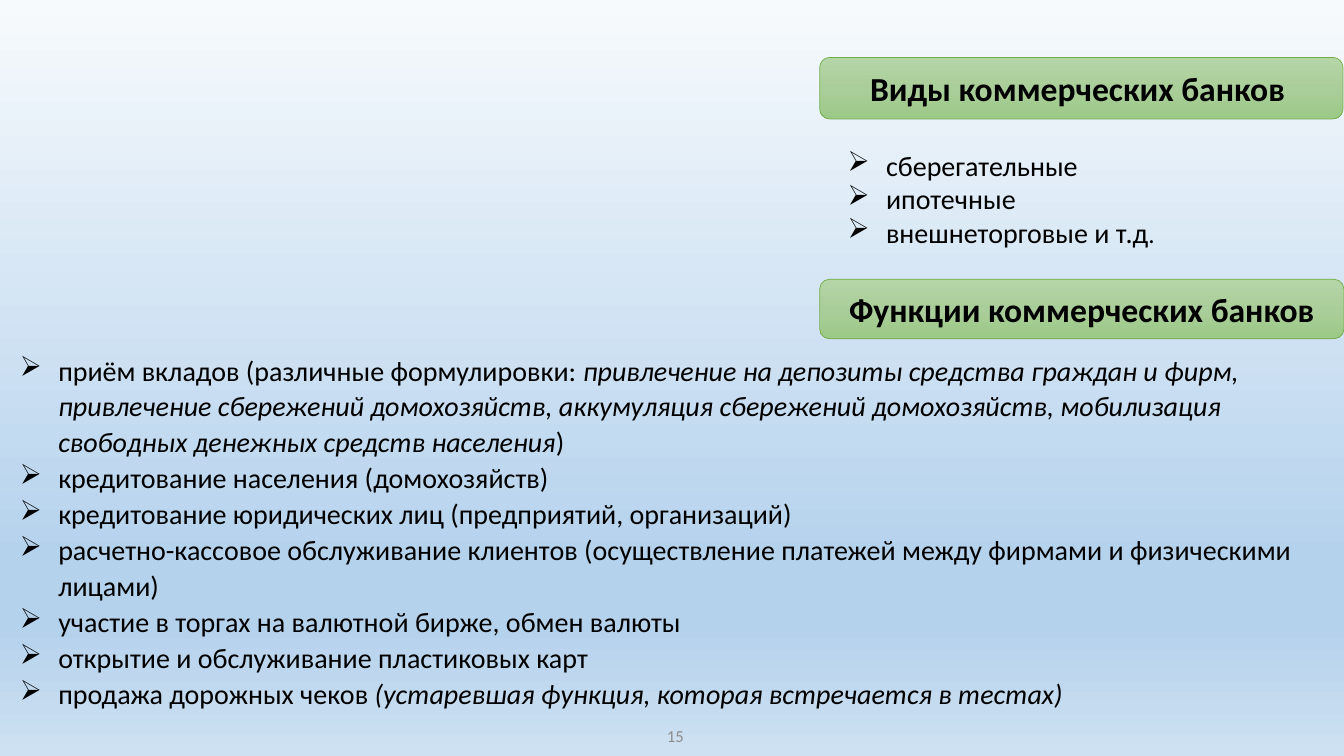
"""Build the slide on the kinds and functions of commercial banks."""
from dataclasses import dataclass

from lxml.etree import SubElement
from pptx import Presentation
from pptx.dml.color import RGBColor
from pptx.dml.fill import FillFormat
from pptx.enum.shapes import MSO_SHAPE as Preset
from pptx.enum.text import MSO_ANCHOR as Anchor, PP_ALIGN as Align
from pptx.oxml.ns import qn
from pptx.slide import Slide
from pptx.text.text import TextFrame
from pptx.util import Inches, Pt

FONT = "Calibri"
COLORS = {
    "text": "000000", "number": "8C8C8C", "border": "70AD47",
    "sky_top": "F7FAFD", "sky_deep": "B5D2EC", "sky_bottom": "CEE1F2",
    "green_top": "B5D5A7", "green_middle": "AACE9A", "green_bottom": "9CC987",
}
SKY = [(0, "sky_top"), (74, "sky_deep"), (83, "sky_deep"), (100, "sky_bottom")]
GREEN = [(0, "green_top"), (50, "green_middle"), (100, "green_bottom")]


@dataclass(frozen=True)
class Box:
    left: float
    top: float
    width: float
    height: float

    def lengths(self) -> list[Inches]:
        """Give the four lengths in the order that the shape methods take."""
        return [Inches(n) for n in (self.left, self.top, self.width, self.height)]


@dataclass(frozen=True)
class Part:
    text: str
    italic: bool = False
    size: int | None = None


@dataclass(frozen=True)
class Heading:
    box: Box
    text: str


@dataclass(frozen=True)
class BulletList:
    box: Box
    items: list[list[Part]]
    anchor: Anchor
    line_spacing: float


HEADINGS = [
    Heading(Box(8.13, 0.57, 5.19, 0.61), "Виды коммерческих банков "),
    Heading(Box(8.13, 2.77, 5.2, 0.59), "Функции коммерческих банков"),
]
BULLET_LISTS = [
    BulletList(Box(8.31, 1.41, 4.46, 1.11), [
        [Part("сберегательные")],
        [Part("ипотечные")],
        [Part("внешнеторговые и т.д"), Part(".", size=18)],
    ], Anchor.BOTTOM, 1.0),
    BulletList(Box(0.1, 3.43, 13.14, 3.7), [
        [Part("приём вкладов (различные формулировки: "),
         Part("привлечение на депозиты средства граждан и фирм, привлечение "
              "сбережений домохозяйств, аккумуляция сбережений домохозяйств, "
              "мобилизация свободных денежных средств населения", italic=True),
         Part(")")],
        [Part("кредитование населения (домохозяйств)")],
        [Part("кредитование юридических лиц (предприятий, организаций)")],
        [Part("расчетно-кассовое обслуживание клиентов (осуществление платежей "
              "между фирмами и физическими лицами)")],
        [Part("участие в торгах на валютной бирже, обмен валюты")],
        [Part("открытие и обслуживание пластиковых карт")],
        [Part("продажа дорожных чеков "),
         Part("(устаревшая функция, которая встречается в тестах)", italic=True)],
    ], Anchor.TOP, 1.07),
]


def color(name: str) -> RGBColor:
    """Look up a colour by its name."""
    return RGBColor.from_string(COLORS[name])


def fill_downward(fill: FillFormat, owner, stops: list[tuple[int, str]]) -> None:
    """Fill from top to bottom through the given stops."""
    fill.gradient()
    fill.gradient_angle = 270
    stop_list = owner.find(".//" + qn("a:gsLst"))
    for old_stop in list(stop_list):
        stop_list.remove(old_stop)
    for percent, name in stops:
        stop = SubElement(stop_list, qn("a:gs"), pos=str(percent * 1000))
        SubElement(stop, qn("a:srgbClr"), val=COLORS[name])


def style(paragraph, size: int, name: str = "text", bold: bool = False) -> None:
    """Set the font that a whole paragraph shares."""
    font = paragraph.font
    font.name, font.size, font.bold = FONT, Pt(size), bold
    font.color.rgb = color(name)


def add_text_frame(slide: Slide, box: Box, anchor: Anchor) -> TextFrame:
    """Add a wrapping text box and return its frame."""
    frame = slide.shapes.add_textbox(*box.lengths()).text_frame
    frame.word_wrap = True
    frame.vertical_anchor = anchor
    return frame


def add_heading(slide: Slide, heading: Heading) -> None:
    """Add a rounded green heading."""
    banner = slide.shapes.add_shape(Preset.ROUNDED_RECTANGLE, *heading.box.lengths())
    banner.shadow.inherit = False
    fill_downward(banner.fill, banner.element, GREEN)
    banner.line.color.rgb = color("border")
    banner.line.width = Pt(0.5)
    banner.text_frame.vertical_anchor = Anchor.MIDDLE
    title = banner.text_frame.paragraphs[0]
    title.text = heading.text
    title.alignment = Align.CENTER
    style(title, 24, bold=True)


def add_bullet_list(slide: Slide, bullets: BulletList) -> None:
    """Add a list with arrow bullets and a gap after its last item."""
    frame = add_text_frame(slide, bullets.box, bullets.anchor)
    for index, parts in enumerate(bullets.items):
        item = frame.add_paragraph() if index else frame.paragraphs[0]
        properties = item._p.get_or_add_pPr()
        properties.set("marL", str(Inches(0.38)))
        properties.set("indent", str(-Inches(0.38)))
        SubElement(properties, qn("a:buChar"), char="➢")
        item.line_spacing = bullets.line_spacing
        item.space_after = Pt(8 if index == len(bullets.items) - 1 else 0)
        style(item, 20)
        for part in parts:
            run = item.add_run()
            run.text = part.text
            if part.italic:
                run.font.italic = True
            if part.size:
                run.font.size = Pt(part.size)


def add_slide_number(slide: Slide, box: Box, number: str) -> None:
    """Add the grey slide number."""
    page = add_text_frame(slide, box, Anchor.MIDDLE).paragraphs[0]
    page.text = number
    page.alignment = Align.RIGHT
    style(page, 12, "number")


def main() -> None:
    """Build and save the presentation."""
    deck = Presentation()
    deck.slide_width, deck.slide_height = Inches(13.33), Inches(7.5)
    slide = deck.slides.add_slide(deck.slide_layouts.get_by_name("Blank"))
    fill_downward(slide.background.fill, slide.element, SKY)
    add_slide_number(slide, Box(6.44, 7.1, 0.44, 0.4), "15")
    for heading in HEADINGS:
        add_heading(slide, heading)
    for bullets in BULLET_LISTS:
        add_bullet_list(slide, bullets)
    deck.save("out.pptx")


if __name__ == "__main__":
    main()
